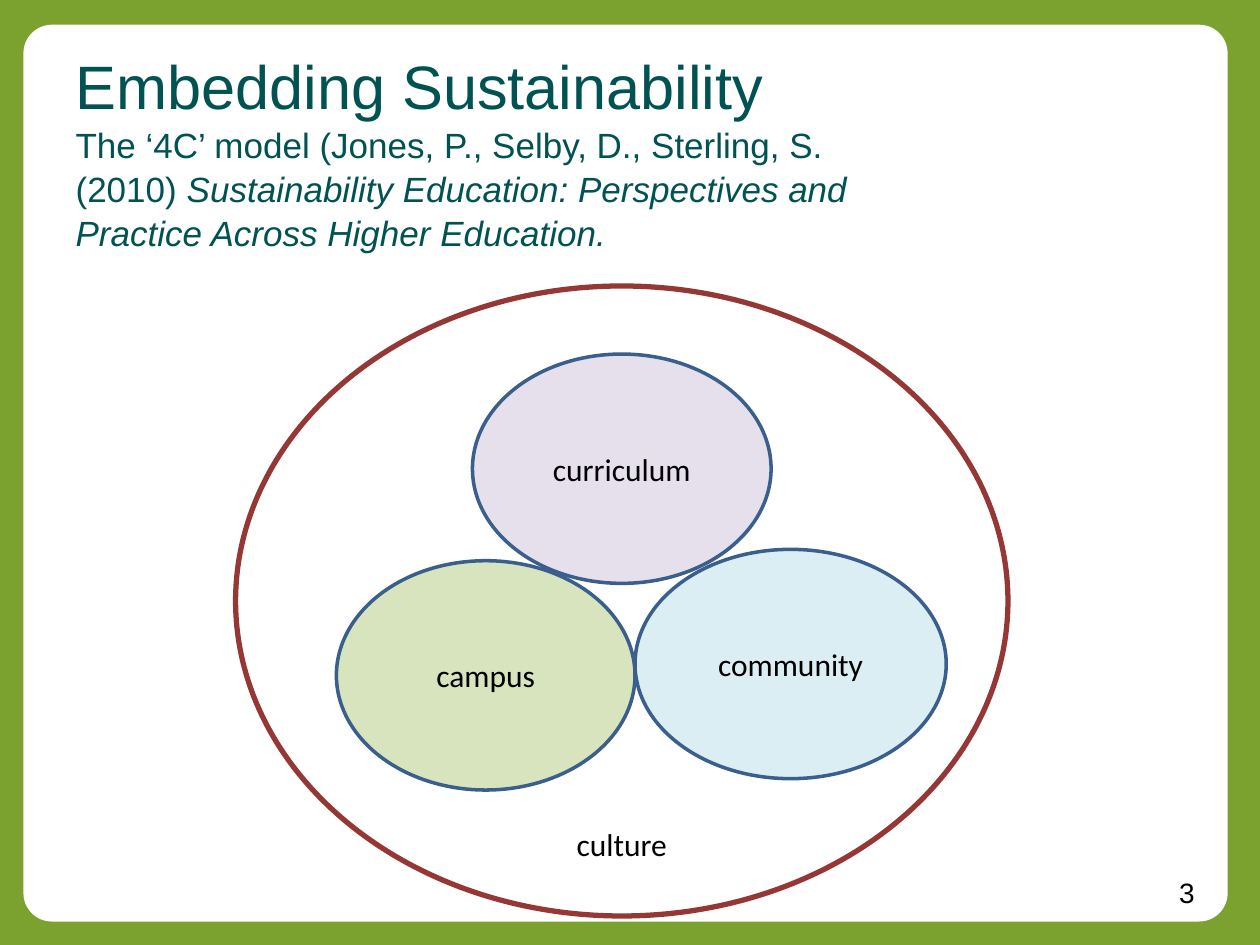
from dataclasses import dataclass

from pptx import Presentation
from pptx.dml.color import RGBColor
from pptx.enum.shapes import MSO_SHAPE
from pptx.enum.text import MSO_ANCHOR, MSO_AUTO_SIZE, PP_ALIGN
from pptx.util import Inches, Pt

ELLIPSE, ROUNDED = MSO_SHAPE.OVAL, MSO_SHAPE.ROUNDED_RECTANGLE
TOP, MIDDLE = MSO_ANCHOR.TOP, MSO_ANCHOR.MIDDLE
LEFT, CENTER, RIGHT = PP_ALIGN.LEFT, PP_ALIGN.CENTER, PP_ALIGN.RIGHT
NO_AUTOFIT = MSO_AUTO_SIZE.NONE
TITLE_ONLY = 5
COLUMNS, ROWS = 100, 75


@dataclass(frozen=True)
class Theme:
    green: str = "7BA22F"
    white: str = "FFFFFF"
    teal: str = "005352"
    black: str = "000000"
    red: str = "953735"
    blue: str = "3A5F8C"
    lilac: str = "E6E0EC"
    lime: str = "D7E4BD"
    aqua: str = "DBEEF4"
    heading_font: str = "Arial"
    label_font: str = "Calibri"
    title_size: int = 35
    citation_size: int = 20
    label_size: int = 18
    number_size: int = 16


class SlideBuilder:
    def __init__(self, presentation, theme):
        self.theme = theme
        self.cell_width = presentation.slide_width / COLUMNS
        self.cell_height = presentation.slide_height / ROWS
        self.slide = presentation.slides.add_slide(presentation.slide_layouts[TITLE_ONLY])
        self.paint(self.slide.background.fill, theme.green)

    def area(self, column, row, columns, rows):
        return (round(column * self.cell_width), round(row * self.cell_height),
                round(columns * self.cell_width), round(rows * self.cell_height))

    def paint(self, fill, color):
        fill.solid()
        fill.fore_color.rgb = RGBColor.from_string(color)

    def format_font(self, font, color, **values):
        for name, value in values.items():
            setattr(font, name, value)
        font.color.rgb = RGBColor.from_string(color)

    def format_frame(self, frame, anchor):
        values = {"word_wrap": True, "auto_size": NO_AUTOFIT, "vertical_anchor": anchor}
        for name, value in values.items():
            setattr(frame, name, value)

    def fill_frame(self, frame, text, font, size, alignment, anchor):
        self.format_frame(frame, anchor)
        paragraph = frame.paragraphs[0]
        paragraph.alignment = alignment
        run = paragraph.add_run()
        run.text = text
        self.format_font(run.font, self.theme.black, name=font, size=Pt(size))

    def outline(self, parent, kind, area, fill, line, width):
        shape = parent.add_shape(kind, *self.area(*area))
        shape.shadow.inherit = False
        self.paint(shape.fill, fill)
        self.paint(shape.line.fill, line)
        shape.line.width = Pt(width)
        return shape

    def panel(self, area, corner):
        white = self.theme.white
        shape = self.outline(self.slide.shapes, ROUNDED, area, white, white, 2)
        shape.adjustments[0] = corner
        self.slide.shapes._spTree.insert(2, shape._element)

    def title(self, area, heading, citation, work):
        theme = self.theme
        title = self.slide.shapes.title
        title.left, title.top, title.width, title.height = self.area(*area)
        self.format_frame(title.text_frame, TOP)
        paragraph = title.text_frame.paragraphs[0]
        paragraph.alignment = LEFT
        paragraph.line_spacing = 1.05
        parts = ((heading, theme.title_size, False),
                 (citation, theme.citation_size, False),
                 (work, theme.citation_size, True))
        for text, size, italic in parts:
            run = paragraph.add_run()
            run.text = text
            self.format_font(run.font, theme.teal, name=theme.heading_font,
                             size=Pt(size), italic=italic)
            if text == heading:
                paragraph.add_line_break()

    def text(self, parent, area, text, font, size, alignment, anchor):
        box = parent.add_textbox(*self.area(*area))
        self.fill_frame(box.text_frame, text, font, size, alignment, anchor)

    def circle_model(self, outer, outer_label, circles):
        theme = self.theme
        group = self.slide.shapes.add_group_shape().shapes
        self.outline(group, ELLIPSE, outer, theme.white, theme.red, 3)
        label_area, label = outer_label
        self.text(group, label_area, label, theme.label_font, theme.label_size, CENTER, MIDDLE)
        for name, area, fill in circles:
            shape = self.outline(group, ELLIPSE, area, fill, theme.blue, 2)
            self.fill_frame(shape.text_frame, name, theme.label_font, theme.label_size,
                            CENTER, MIDDLE)


def main():
    presentation = Presentation()
    presentation.slide_width, presentation.slide_height = Inches(10), Inches(7.5)
    theme = Theme()
    builder = SlideBuilder(presentation, theme)
    builder.panel((2, 2.1, 95.3, 70.9), 0.03)
    builder.text(builder.slide.shapes, (73, 69, 22.8, 3.7), "3",
                 theme.heading_font, theme.number_size, RIGHT, TOP)
    builder.title((5, 3, 68, 10.1), "Embedding Sustainability",
                  "The ‘4C’ model (Jones, P., Selby, D., Sterling, S. (2010) ",
                  "Sustainability Education: Perspectives and Practice Across Higher Education.")
    builder.circle_model(
        (18.7, 22.7, 61.3, 50),
        ((39.35, 65, 20, 4), "culture"),
        (("community", (50.4, 43.6, 24.7, 18.2), theme.aqua),
         ("campus", (26.7, 44.5, 23.7, 18.2), theme.lime),
         ("curriculum", (37.5, 28.1, 23.7, 18.2), theme.lilac)))
    presentation.save("out.pptx")


if __name__ == "__main__":
    main()
